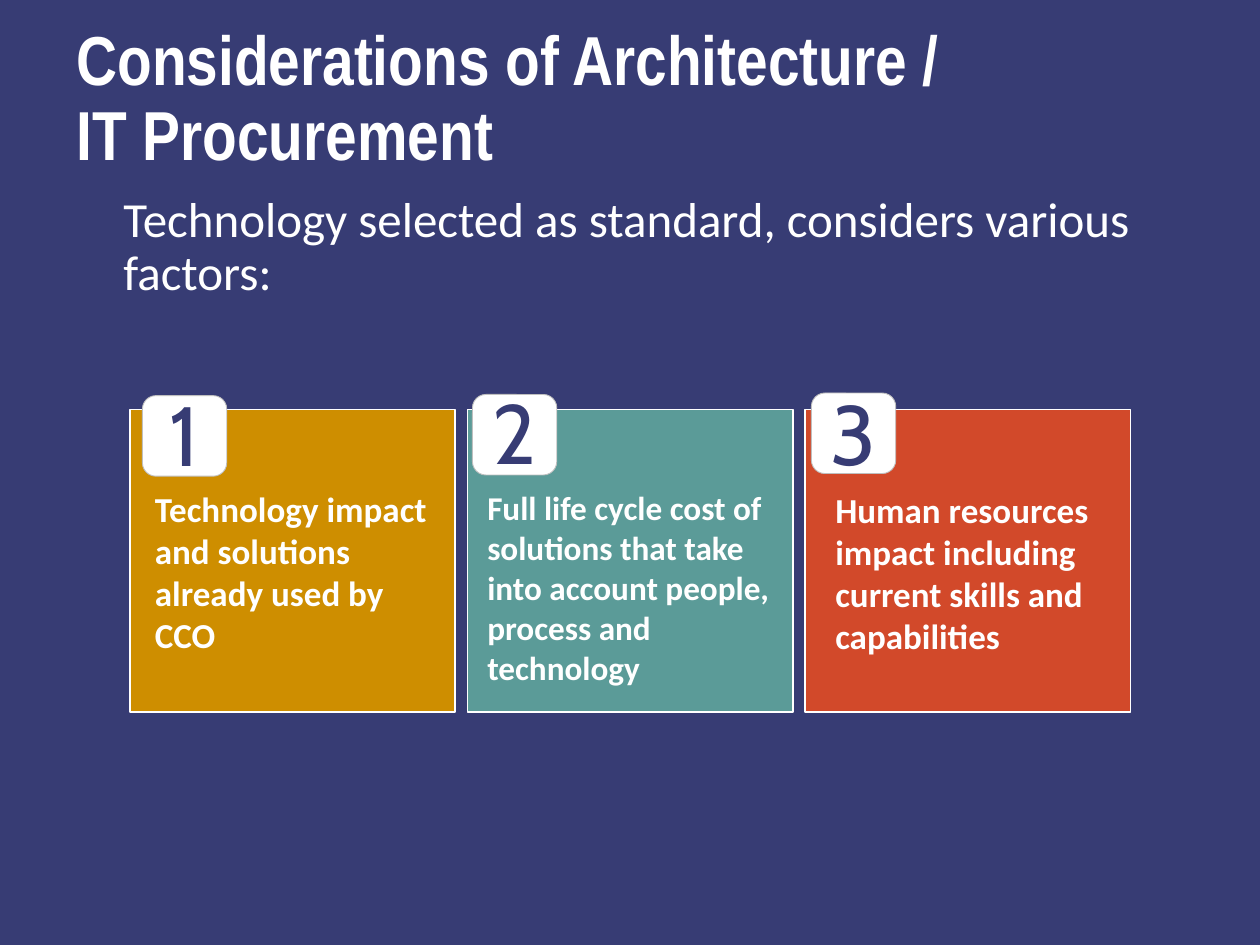
from pptx import Presentation
from pptx.dml.color import RGBColor
from pptx.enum import shapes, text
from pptx.util import Pt

NAVY, WHITE, GREY = "373C74", "FFFFFF", "BFBFBF"
CARD_LEFT, CARD_TOP, CARD_WIDTH, CARD_HEIGHT, CARD_PITCH = 74.2, 234, 185.8, 172.8, 193
BADGE_WIDTH, BADGE_HEIGHT, NUMBER_HEIGHT = 48.2, 46, 65.5

# Fill, wording, text size, then boxes relative to the card:
# text (left, top, width, height), badge (left, top), top of the number
CARDS = [
    ("CE8E00", "Technology impact and solutions already used by CCO", 20,
     (7.2, 41, 171.4, 126), (7.2, -7.9), -18.7),
    ("5B9B98", "Full life cycle cost of solutions that take into account people, "
     "process and technology", 19,
     (4.2, 41, 184.3, 122.4), (2.8, -8.6), -20.2),
    ("D2492A", "Human resources impact including current skills and capabilities", 20,
     (10, 41.8, 169.2, 104.4), (3.5, -9.4), -19.4),
]


def color(value):
    return RGBColor.from_string(value)


def add_box(slide, kind, box, fill, line=None, line_width=1):
    shape = slide.shapes.add_shape(kind, *map(Pt, box))
    shape.shadow.inherit = False
    shape.fill.solid()
    shape.fill.fore_color.rgb = color(fill)
    if line:
        shape.line.color.rgb = color(line)
        shape.line.width = Pt(line_width)
    else:
        shape.line.fill.background()


def add_text(slide, box, lines, size, font, fill=WHITE, bold=False):
    """Add one paragraph, broken between the given lines, and return its frame."""
    frame = slide.shapes.add_textbox(*map(Pt, box)).text_frame
    frame.word_wrap = True
    paragraph = frame.paragraphs[0]
    for index, line in enumerate(lines):
        if index:
            paragraph.add_line_break()
        run = paragraph.add_run()
        run.text = line
        run.font.size = Pt(size)
        run.font.name = font
        run.font.bold = bold
        run.font.color.rgb = color(fill)
    return frame


def add_heading(slide, box):
    lines = ["Considerations of Architecture / ", "IT Procurement"]
    frame = add_text(slide, box, lines, 39.6, "Arial Narrow", bold=True)
    frame.vertical_anchor = text.MSO_ANCHOR.MIDDLE
    frame.paragraphs[0].line_spacing = 0.9


def add_introduction(slide, box):
    lines = ["Technology selected as standard, considers various factors:"]
    paragraph = add_text(slide, box, lines, 28, "Calibri").paragraphs[0]
    paragraph.line_spacing = 0.9
    paragraph.space_before = Pt(10)


def add_badge(slide, box, number, number_top):
    left, _, width, _ = box
    add_box(slide, shapes.MSO_SHAPE.ROUNDED_RECTANGLE, box, WHITE, GREY, 0.5)
    frame = add_text(slide, (left, number_top, width, NUMBER_HEIGHT),
                     [str(number)], 48, "Cabin", NAVY)
    frame.paragraphs[0].alignment = text.PP_ALIGN.CENTER


def add_card(slide, box, number, card):
    fill, wording, size, text_box, badge, number_top = card
    left, top = box[:2]
    add_box(slide, shapes.MSO_SHAPE.RECTANGLE, box, fill, WHITE)
    text_left, text_top, text_width, text_height = text_box
    frame = add_text(slide, (left + text_left, top + text_top, text_width, text_height),
                     [wording], size, "Calibri", bold=True)
    frame.auto_size = text.MSO_AUTO_SIZE.SHAPE_TO_FIT_TEXT
    badge_box = (left + badge[0], top + badge[1], BADGE_WIDTH, BADGE_HEIGHT)
    add_badge(slide, badge_box, number, top + number_top)


def main():
    presentation = Presentation()
    presentation.slide_width, presentation.slide_height = Pt(720), Pt(540)
    slide = presentation.slides.add_slide(presentation.slide_layouts[6])
    add_box(slide, shapes.MSO_SHAPE.RECTANGLE, (0, 0, 720, 540), NAVY)
    add_heading(slide, (36.7, 24.5, 653, 66.2))
    add_introduction(slide, (63.4, 108, 622.8, 77.8))
    for index, card in enumerate(CARDS):
        box = (CARD_LEFT + index * CARD_PITCH, CARD_TOP, CARD_WIDTH, CARD_HEIGHT)
        add_card(slide, box, index + 1, card)
    presentation.save("out.pptx")


if __name__ == "__main__":
    main()
